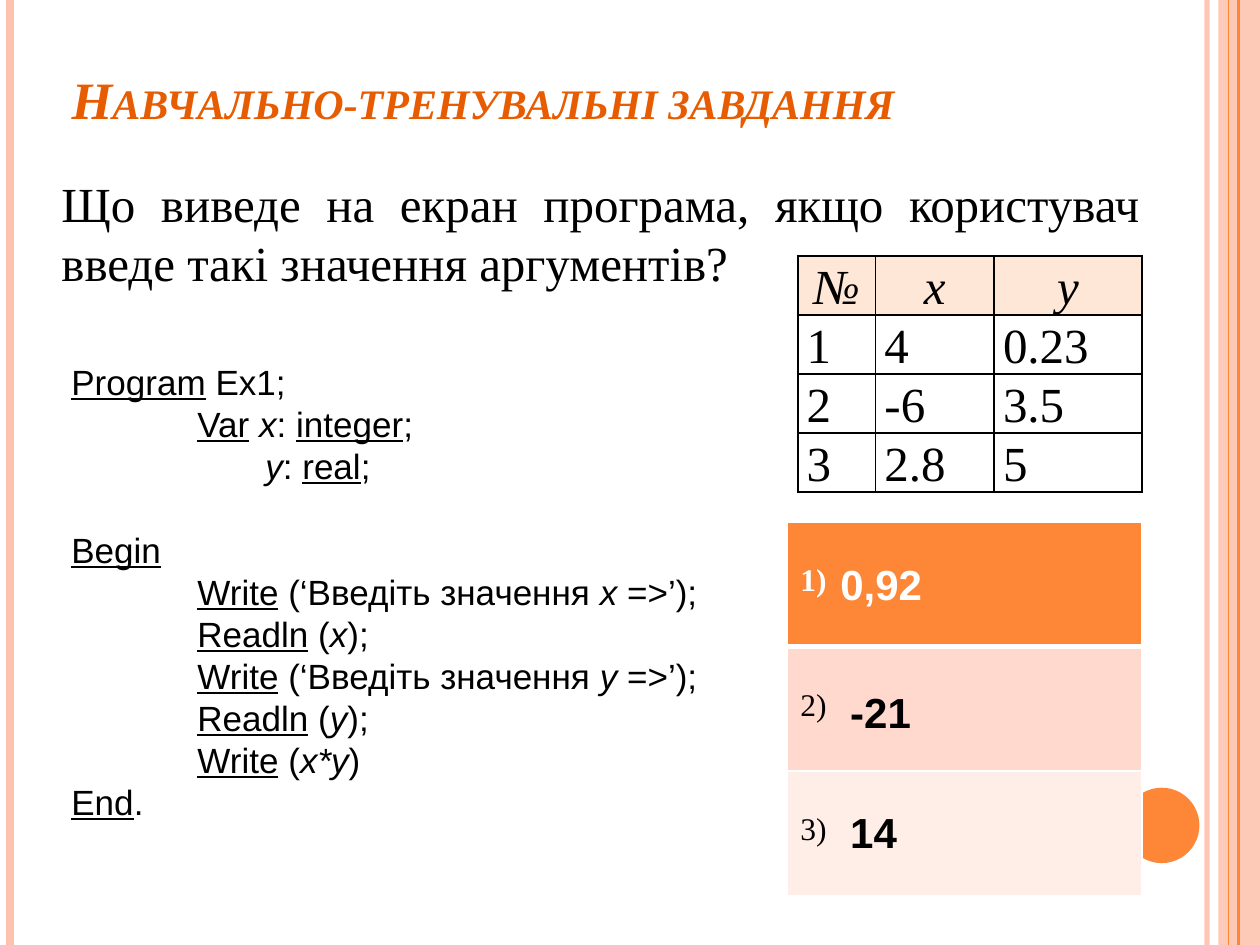
from lxml import etree
from pptx import Presentation
from pptx.dml.color import RGBColor
from pptx.enum import shapes as sh, text as tx
from pptx.oxml import ns
from pptx.util import Cm, Pt

SERIF, SANS = "Times New Roman", "Arial"
ORANGE, PEACH, BLACK, WHITE = "FE8637", "FEC3AE", "000000", "FFFFFF"

TITLE = "Навчально-тренувальні завдання"
TASK = "Що виведе на екран програма, якщо користувач введе такі значення аргументів? "

# x in cm, colour, width in pt, opacity in %
RULES = [
    (24.33, PEACH, 3, 93),
    (0.2, PEACH, 4.5, 100),
    (24.97, ORANGE, 1.5, 100),
    (24.77, ORANGE, 0.75, 100),
]

# indent in cm, space before in pt, runs of (text, style): u underlined, i italic
CODE = [
    (0, 0, [("Program", "u"), (" Ex1;", "")]),
    (2.54, 0, [("Var", "u"), (" ", ""), ("x", "i"), (": ", ""), ("integer", "u"), (";", "")]),
    (3.91, 0, [("y", "i"), (": ", ""), ("real", "u"), (";", "")]),
    (0, 24, [("Begin", "u")]),
    (2.54, 0, [("Write", "u"), (" (‘Введіть значення ", ""), ("х", "i"), (" =>’);", "")]),
    (2.54, 0, [("Readln", "u"), (" (", ""), ("x", "i"), (");", "")]),
    (2.54, 0, [("Write", "u"), (" (‘Введіть значення ", ""), ("y", "i"), (" =>’);", "")]),
    (2.54, 0, [("Readln", "u"), (" (", ""), ("y", "i"), (");", "")]),
    (2.54, 0, [("Write", "u"), (" (", ""), ("x*y", "i"), (")", "")]),
    (0, 0, [("End", "u"), (".", "")]),
]

DATA = [
    ["№", "х", "у"],
    ["1", "4", "0.23"],
    ["2", "-6", "3.5"],
    ["3", "2.8", "5"],
]
WIDTHS = [1.57, 2.39, 2.98]

# label, fill, text colour, bold label
CHOICES = [
    ("1)", ORANGE, WHITE, True),
    ("2)", "FFD9CE", BLACK, False),
    ("3)", "FFEDE8", BLACK, False),
]

# text, left, top, width in cm, colour
ANSWERS = [
    ("0,92", 16.69, 11.13, 3.81, WHITE),
    ("-21", 16.89, 13.72, 2.21, BLACK),
    ("14", 16.89, 16.13, 2.01, BLACK),
]


def rgb(code):
    return RGBColor.from_string(code)


def fade(fill, pct):
    """Set the opacity of a solid fill element."""
    color = fill.find(".//" + ns.qn("a:srgbClr"))
    etree.SubElement(color, ns.qn("a:alpha"), val=str(pct * 1000))


def add_run(para, words, size, face, color, bold=False, style=""):
    run = para.add_run()
    run.text = words
    font = run.font
    font.size, font.name, font.bold = Pt(size), face, bold
    font.color.rgb = rgb(color)
    font.italic, font.underline = "i" in style, "u" in style
    return run


def add_box(slide, left, top, width, height):
    frame = slide.shapes.add_textbox(Cm(left), Cm(top), Cm(width), Cm(height)).text_frame
    frame.word_wrap = True
    return frame


def add_part(slide, kind, color, *place):
    part = slide.shapes.add_shape(kind, *[Cm(n) for n in place])
    part.shadow.inherit = False
    part.fill.solid()
    part.fill.fore_color.rgb = rgb(color)
    part.line.fill.background()
    return part


def add_grid(slide, left, top, widths, height, count):
    grid = slide.shapes.add_table(
        count, len(widths), Cm(left), Cm(top), Cm(sum(widths)), Cm(height * count)).table
    grid.first_row = grid.horz_banding = False
    for col, width in zip(grid.columns, widths):
        col.width = Cm(width)
    for row in grid.rows:
        row.height = Cm(height)
    return grid


def set_cell(cell, color, edge, widths):
    """Draw borders (left, right, top, bottom, in pt), then the fill."""
    props = cell._tc.get_or_add_tcPr()
    for side, width in zip("LRTB", widths):
        line = etree.SubElement(props, ns.qn("a:ln" + side), w=str(Pt(width)))
        solid = etree.SubElement(line, ns.qn("a:solidFill"))
        etree.SubElement(solid, ns.qn("a:srgbClr"), val=edge)
    if color:
        cell.fill.solid()
        cell.fill.fore_color.rgb = rgb(color)
    else:
        cell.fill.background()


def add_frame(slide):
    """Side stripes and the round mark behind the content."""
    band = add_part(slide, sh.MSO_SHAPE.RECTANGLE, PEACH, 24.56, 0, 0.84, 19.05)
    fade(band._element.spPr, 87)
    for x, color, width, pct in RULES:
        rule = slide.shapes.add_connector(
            sh.MSO_CONNECTOR.STRAIGHT, Cm(x), 0, Cm(x), Cm(19.05))
        rule.line.color.rgb = rgb(color)
        rule.line.width = Pt(width)
        if pct < 100:
            fade(rule._element.spPr, pct)
        etree.SubElement(rule._element.spPr, ns.qn("a:effectLst"))
    add_part(slide, sh.MSO_SHAPE.OVAL, ORANGE, 22.66, 15.88, 1.52, 1.52)


def add_text(slide):
    title = slide.shapes.title
    title.left, title.top, title.width, title.height = Cm(1.19), Cm(0.99), Cm(20.75), Cm(1.75)
    title.text_frame.vertical_anchor = tx.MSO_ANCHOR.BOTTOM
    para = title.text_frame.paragraphs[0]
    para.alignment = tx.PP_ALIGN.LEFT
    run = add_run(para, TITLE, 30, SERIF, "E75C01", True, "i")
    run.font._element.set("cap", "small")

    para = add_box(slide, 0.99, 3.38, 22.23, 2.64).paragraphs[0]
    para.alignment = tx.PP_ALIGN.JUSTIFY
    para.line_spacing = Pt(33.6)
    add_run(para, TASK, 28, SERIF, BLACK)

    frame = add_box(slide, 1.19, 7.14, 14.68, 9.65)
    for n, (indent, gap, runs) in enumerate(CODE):
        para = frame.add_paragraph() if n else frame.paragraphs[0]
        para._p.get_or_add_pPr().set("marL", str(Cm(indent)))
        para.line_spacing, para.space_before = Pt(24), Pt(gap)
        for words, style in runs:
            add_run(para, words, 20, SANS, BLACK, style=style)


def add_data(slide):
    grid = add_grid(slide, 16.08, 5.16, WIDTHS, 1.19, len(DATA))
    for r, row in enumerate(DATA):
        for c, words in enumerate(row):
            cell = grid.cell(r, c)
            outer = [c == 0, c == len(row) - 1, r == 0, r == len(DATA) - 1]
            set_cell(cell, None if r else "FFE7D7", BLACK, [1.5 if o else 1 for o in outer])
            cell.margin_left = cell.margin_right = Cm(0.18)
            cell.margin_top = cell.margin_bottom = 0
            para = cell.text_frame.paragraphs[0]
            para.line_spacing = Pt(33.6)
            para.alignment = tx.PP_ALIGN.LEFT if r else tx.PP_ALIGN.CENTER
            add_run(para, words, 28, SERIF, BLACK, style="" if r else "i")


def add_choices(slide):
    grid = add_grid(slide, 15.88, 10.52, [7.14], 2.51, len(CHOICES))
    for r, (label, fill, color, bold) in enumerate(CHOICES):
        cell = grid.cell(r, 0)
        set_cell(cell, fill, WHITE, [1, 1, 3 if r == 1 else 1, 3 if r == 0 else 1])
        cell.margin_top = Cm(0.84)
        add_run(cell.text_frame.paragraphs[0], label, 18, SERIF, color, bold)
    for words, left, top, width, color in ANSWERS:
        para = add_box(slide, left, top, width, 1.27).paragraphs[0]
        add_run(para, words, 24, SANS, color, True)


def main():
    deck = Presentation()
    deck.slide_width, deck.slide_height = Cm(25.4), Cm(19.05)
    slide = deck.slides.add_slide(deck.slide_layouts[5])
    add_frame(slide)
    add_text(slide)
    add_data(slide)
    add_choices(slide)
    deck.save("out.pptx")


if __name__ == "__main__":
    main()
